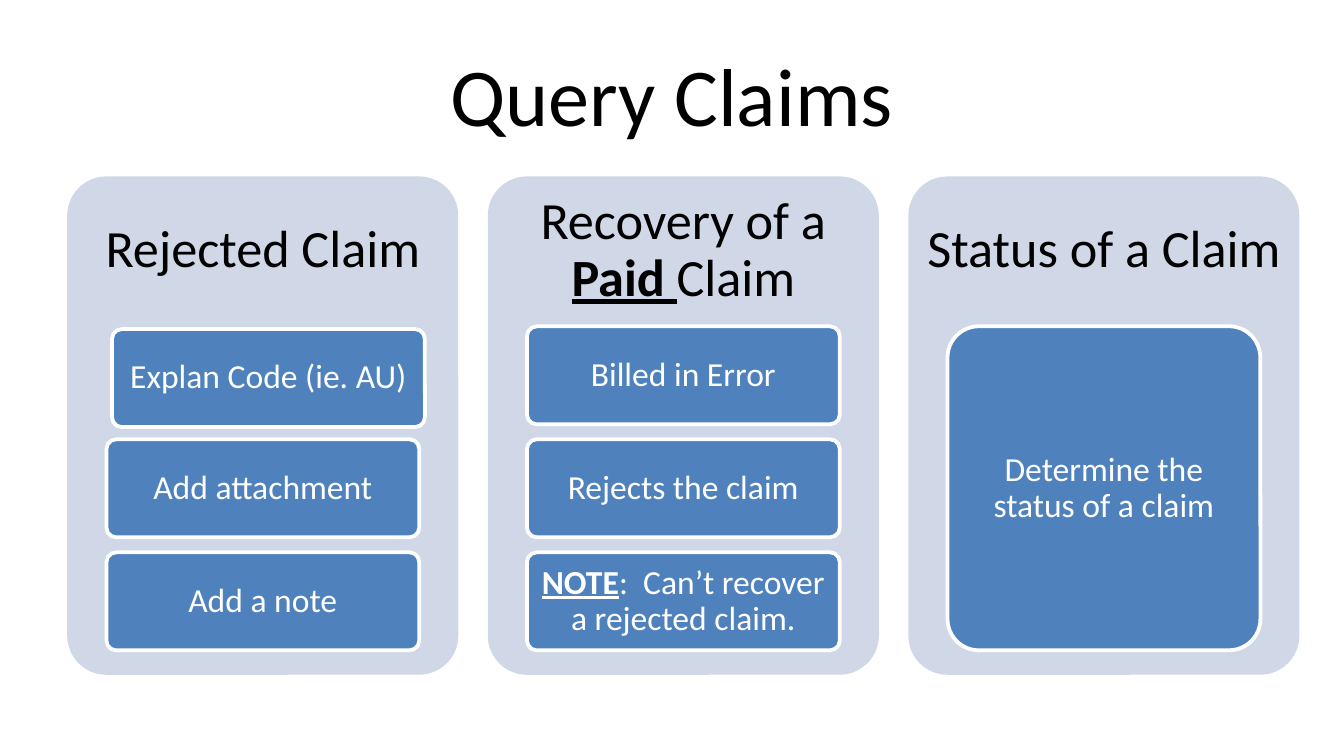
from pptx import Presentation
from pptx.dml.color import RGBColor
from pptx.enum.shapes import MSO_SHAPE
from pptx.enum.text import MSO_ANCHOR, PP_ALIGN
from pptx.util import Pt

ROUNDED = MSO_SHAPE.ROUNDED_RECTANGLE
MIDDLE = MSO_ANCHOR.MIDDLE
CENTER = PP_ALIGN.CENTER

# Content: each text is a list of (words, emphasised) spans
TITLE = "Query Claims"
COLUMNS = [
    ([("Rejected Claim", False)],
     [[("Explan Code (ie. AU)", False)],
      [("Add attachment", False)],
      [("Add a note", False)]]),
    ([("Recovery of a", False), (" Paid ", True), ("Claim", False)],
     [[("Billed in Error", False)],
      [("Rejects the claim", False)],
      [("NOTE", True), (":  Can’t recover a rejected claim.", False)]]),
    ([("Status of a Claim", False)],
     [[("Determine the status of a claim", False)]]),
]
NUDGES = {(0, 0): (3, 1.5)}  # (column, row): shift right and down

# Layout in points
PANEL_LEFT, PANEL_TOP, PANEL_WIDTH, PANEL_HEIGHT = 36, 94.5, 209.5, 267
PANEL_STEP = 225.3
HEADING_HEIGHT = 80
CARD_INSET, CARD_TOP, CARD_WIDTH = 21, 174.8, 167.6
STACK_HEIGHT, CARD_GAP = 173.6, 8

FONT = "Calibri"
BLACK, WHITE, PALE, BLUE = "000000", "FFFFFF", "D0D8E8", "4F81BD"


def color(code):
    return RGBColor.from_string(code)


def write(box, spans, size, ink, side=0, edge=0):
    frame = box.text_frame
    frame.word_wrap = True
    frame.vertical_anchor = MIDDLE
    frame.margin_left = frame.margin_right = Pt(side)
    frame.margin_top = frame.margin_bottom = Pt(edge)
    para = frame.paragraphs[0]
    para.alignment = CENTER
    para.line_spacing = 0.9
    para.font.name = FONT
    para.font.size = Pt(size)
    para.font.color.rgb = color(ink)
    for words, emphasised in spans:
        span = para.add_run()
        span.text = words
        if emphasised:
            span.font.bold = True
            span.font.underline = True


def add_rounded(page, left, top, width, height, fill, line=None):
    box = page.shapes.add_shape(ROUNDED, Pt(left), Pt(top), Pt(width), Pt(height))
    box.adjustments[0] = 0.1
    box.shadow.inherit = False
    box.fill.solid()
    box.fill.fore_color.rgb = color(fill)
    if line:
        box.line.color.rgb = color(line)
        box.line.width = Pt(2)
    else:
        box.line.fill.background()
    return box


def add_column(page, column, heading, cards):
    left = PANEL_LEFT + column * PANEL_STEP
    add_rounded(page, left, PANEL_TOP, PANEL_WIDTH, PANEL_HEIGHT, PALE)
    label = page.shapes.add_textbox(
        Pt(left), Pt(PANEL_TOP), Pt(PANEL_WIDTH), Pt(HEADING_HEIGHT))
    write(label, heading, 28, BLACK, 8.4, 8.4)

    # Cards share the stack height equally
    height = (STACK_HEIGHT - CARD_GAP * (len(cards) - 1)) / len(cards)
    for row, spans in enumerate(cards):
        right, down = NUDGES.get((column, row), (0, 0))
        top = CARD_TOP + row * (height + CARD_GAP) + down
        card = add_rounded(page, left + CARD_INSET + right, top,
                           CARD_WIDTH, height, BLUE, WHITE)
        write(card, spans, 18, WHITE, 3.6, 2.7)


def main():
    deck = Presentation()
    deck.slide_width, deck.slide_height = Pt(720), Pt(405)
    page = deck.slides.add_slide(deck.slide_layouts[5])

    # Title
    title = page.shapes.title
    title.left, title.top, title.width, title.height = Pt(36), Pt(16.5), Pt(648), Pt(67.5)
    title.text_frame.text = TITLE
    title.text_frame.vertical_anchor = MIDDLE
    para = title.text_frame.paragraphs[0]
    para.alignment = CENTER
    para.font.name = FONT
    para.font.size = Pt(44)
    para.font.color.rgb = color(BLACK)

    # Columns
    for column, (heading, cards) in enumerate(COLUMNS):
        add_column(page, column, heading, cards)

    deck.save("out.pptx")


if __name__ == "__main__":
    main()
